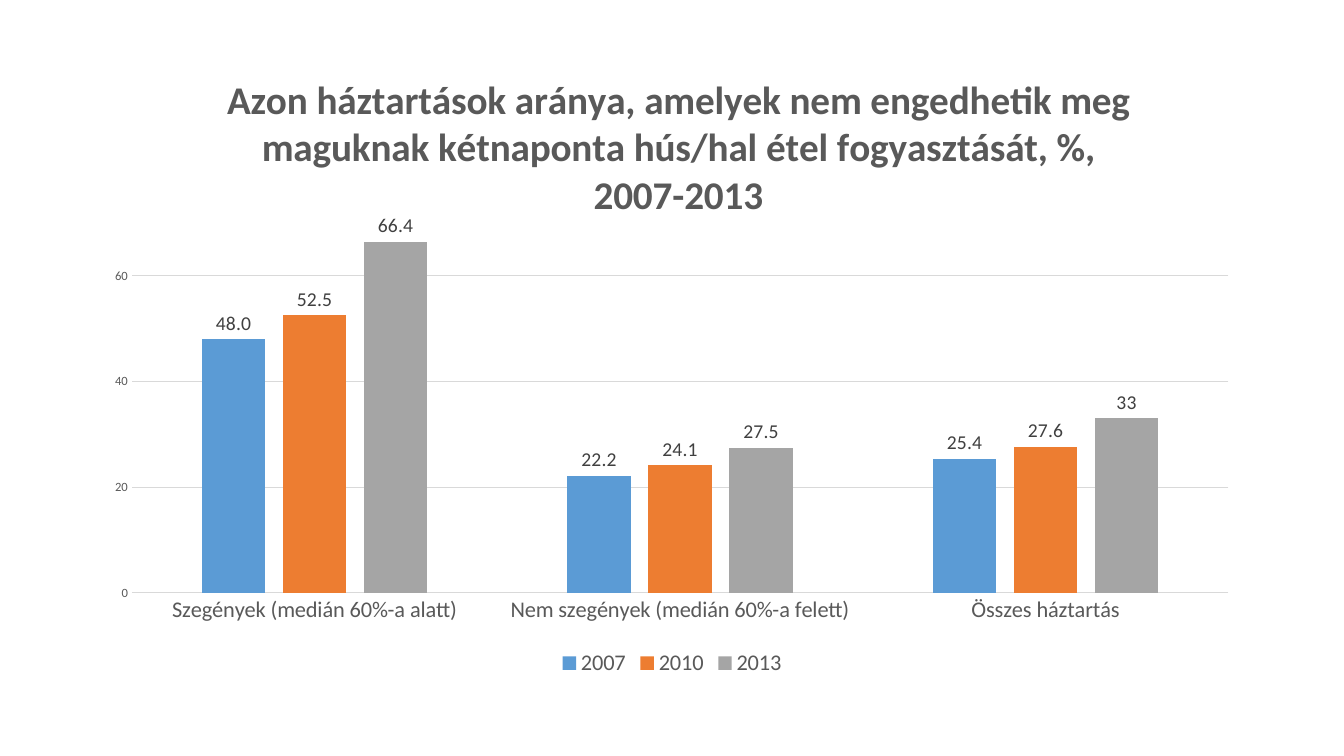
from lxml import etree
from pptx import Presentation
from pptx.chart.data import CategoryChartData
from pptx.dml.color import RGBColor
from pptx.enum.chart import XL_CHART_TYPE, XL_LABEL_POSITION, XL_LEGEND_POSITION, XL_TICK_MARK
from pptx.oxml.ns import qn
from pptx.util import Cm, Pt

CLUSTERED = XL_CHART_TYPE.COLUMN_CLUSTERED
OUTSIDE_END = XL_LABEL_POSITION.OUTSIDE_END
BOTTOM = XL_LEGEND_POSITION.BOTTOM
NO_TICK = XL_TICK_MARK.NONE

TEXT_GREY = RGBColor(0x59, 0x59, 0x59)
LABEL_GREY = RGBColor(0x40, 0x40, 0x40)
LINE_GREY = RGBColor(0xD9, 0xD9, 0xD9)
BLUE = RGBColor(0x5B, 0x9B, 0xD5)
ORANGE = RGBColor(0xED, 0x7D, 0x31)
GREY = RGBColor(0xA5, 0xA5, 0xA5)

TITLE = ("Azon háztartások aránya, amelyek nem engedhetik meg maguknak "
         "kétnaponta hús/hal étel fogyasztását, %, 2007-2013")
HOUSEHOLDS = ["Szegények (medián 60%-a alatt)",
              "Nem szegények (medián 60%-a felett)",
              "Összes háztartás"]
YEARS = [
    ("2007", (48, 22.2, 25.4), BLUE, "0.0"),
    ("2010", (52.5, 24.1, 27.6), ORANGE, "0.0"),
    ("2013", (66.4, 27.5, 33), GREY, "General"),
]


def format_font(font, size, color=TEXT_GREY, bold=False):
    font.name = "Calibri"
    font.size = Pt(size)
    font.bold = bold
    font.color.rgb = color


def format_line(line):
    line.color.rgb = LINE_GREY
    line.width = Pt(0.75)


def set_layout(element, index, **settings):
    layout = element.find(qn("c:layout"))
    if layout is None:
        layout = etree.Element(qn("c:layout"))
        element.insert(index, layout)
    manual = etree.SubElement(layout, qn("c:manualLayout"))
    for name, value in settings.items():
        etree.SubElement(manual, qn(f"c:{name}")).set("val", str(value))


def add_title(chart):
    frame = chart.chart_title.text_frame
    frame.text = TITLE
    format_font(frame.paragraphs[0].runs[0].font, 28, bold=True)
    title = chart._chartSpace.chart.find(qn("c:title"))
    set_layout(title, 1, xMode="edge", yMode="edge", x=0.11, y=0.04)
    chart.chart_title.include_in_layout = False


def format_axes(chart):
    households = chart.category_axis
    households.major_tick_mark = NO_TICK
    format_font(households.tick_labels.font, 16)
    format_line(households.format.line)

    percent = chart.value_axis
    percent.minimum_scale = 0
    percent.maximum_scale = 70
    percent.major_unit = 20
    percent.major_tick_mark = NO_TICK
    percent.tick_labels.number_format = "0"
    percent.tick_labels.number_format_is_linked = False
    format_font(percent.tick_labels.font, 9)
    percent.format.line.fill.background()
    format_line(percent.major_gridlines.format.line)


def format_columns(chart):
    plot = chart.plots[0]
    plot.gap_width = 219
    plot.overlap = -27
    plot.vary_by_categories = False
    for series, (_, _, color, number_format) in zip(plot.series, YEARS):
        series.format.fill.solid()
        series.format.fill.fore_color.rgb = color
        labels = series.data_labels
        labels.show_value = True
        labels.position = OUTSIDE_END
        labels.number_format = number_format
        labels.number_format_is_linked = False
        format_font(labels.font, 14, LABEL_GREY)


def add_household_chart(page, left, top, width, height):
    data = CategoryChartData()
    data.categories = HOUSEHOLDS
    for year, values, _, _ in YEARS:
        data.add_series(year, values)
    chart = page.shapes.add_chart(CLUSTERED, left, top, width, height, data).chart
    format_font(chart.font, 10)
    add_title(chart)
    format_axes(chart)
    format_columns(chart)
    set_layout(chart._chartSpace.chart.plotArea, 0, layoutTarget="inner",
               xMode="edge", yMode="edge", x=0.034, y=0.285, w=0.946, h=0.577)
    chart.has_legend = True
    chart.legend.position = BOTTOM
    chart.legend.include_in_layout = False
    format_font(chart.legend.font, 16)


def main():
    deck = Presentation()
    deck.slide_width = Cm(33.87)
    deck.slide_height = Cm(19.05)
    page = deck.slides.add_slide(deck.slide_layouts[6])
    add_household_chart(page, Cm(2.33), Cm(1.02), Cm(29.21), Cm(16.15))
    deck.save("out.pptx")


if __name__ == "__main__":
    main()
